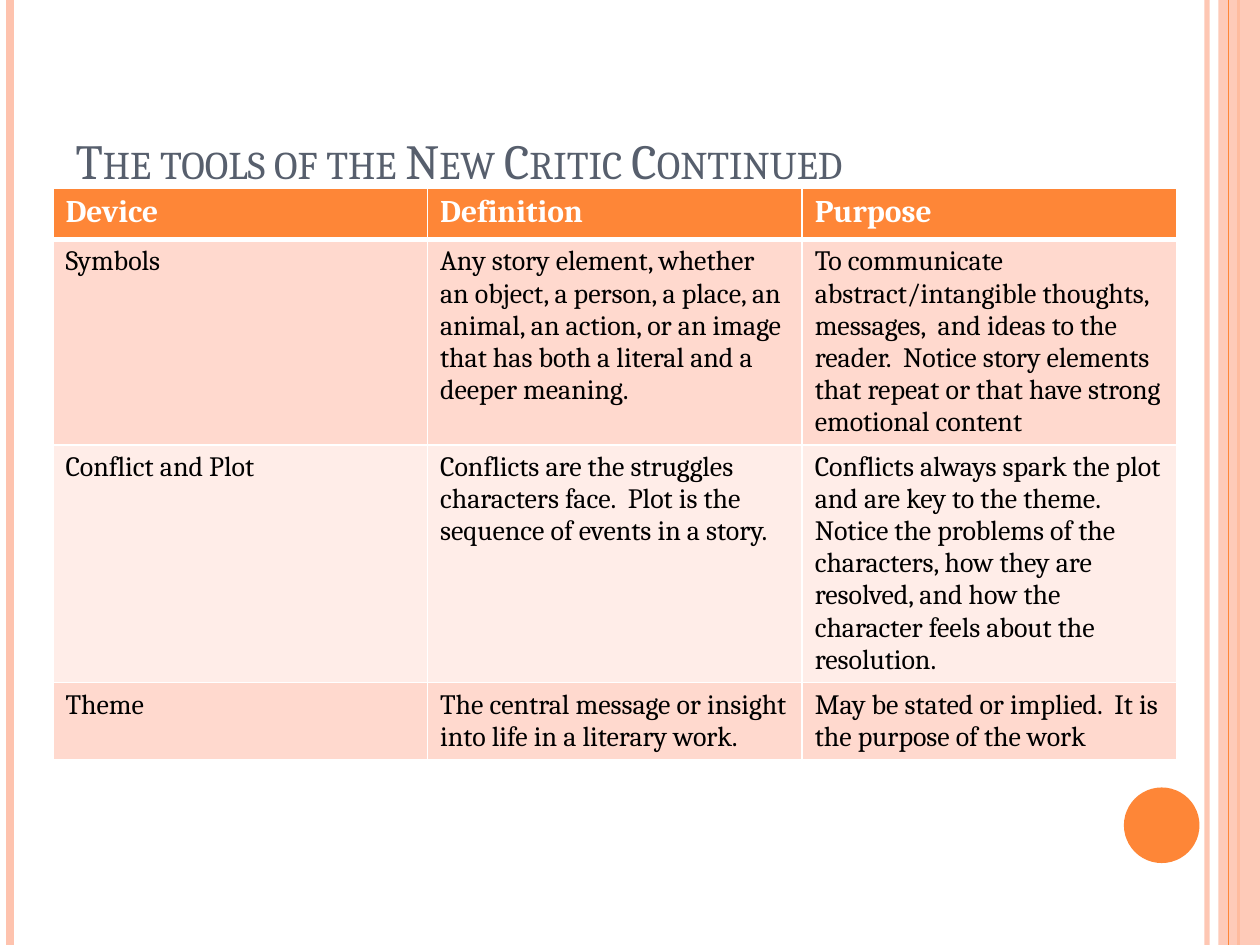
from dataclasses import dataclass

from lxml.etree import SubElement
from pptx import Presentation
from pptx.dml.color import RGBColor
from pptx.enum.shapes import MSO_CONNECTOR, MSO_SHAPE
from pptx.enum.text import MSO_ANCHOR, PP_ALIGN
from pptx.oxml.ns import qn
from pptx.util import Inches, Pt


@dataclass(frozen=True)
class Theme:
    font: str = "Cambria"
    accent: str = "FE8637"
    pale: str = "FEC3AE"
    title: str = "575F6D"
    body: str = "000000"
    white: str = "FFFFFF"
    bands: tuple = ("FFD9CE", "FFEDE8")
    title_size: int = 28
    header_size: int = 18
    body_size: int = 16
    rule: int = 1
    header_rule: int = 3


def unit(n):
    """Length of n grid units; the slide is 100 columns by 75 rows."""
    return Inches(n / 10)


COLS, ROWS = 100, 75


class SlideBuilder:
    def __init__(self, prs, theme):
        self.theme = theme
        self.s = prs.slides.add_slide(prs.slide_layouts[5])

    def style_run(self, r, size, color, bold=False):
        r.font.name = self.theme.font
        r.font.size = Pt(size)
        r.font.bold = bold
        r.font.color.rgb = RGBColor.from_string(color)

    def set_alpha(self, fill_parent, percent):
        color = fill_parent.find(qn("a:solidFill"))[0]
        SubElement(color, qn("a:alpha"), val=str(percent * 1000))

    def vertical_line(self, col, color, width, alpha=None):
        line = self.s.shapes.add_connector(
            MSO_CONNECTOR.STRAIGHT, unit(col), 0, unit(col), unit(ROWS))
        line.line.color.rgb = RGBColor.from_string(color)
        line.line.width = Pt(width)
        sp_pr = line._element.spPr
        if alpha:
            self.set_alpha(sp_pr.find(qn("a:ln")), alpha)
        SubElement(sp_pr, qn("a:effectLst"))

    def shape(self, kind, col, row, width, height, color, alpha=None):
        sp = self.s.shapes.add_shape(
            kind, unit(col), unit(row), unit(width), unit(height))
        sp.shadow.inherit = False
        sp.fill.solid()
        sp.fill.fore_color.rgb = RGBColor.from_string(color)
        sp.line.fill.background()
        if alpha:
            self.set_alpha(sp._element.spPr, alpha)

    def title(self, text, col, row, width, height):
        sp = self.s.shapes.title
        sp.left, sp.top = unit(col), unit(row)
        sp.width, sp.height = unit(width), unit(height)
        tf = sp.text_frame
        tf.text = text
        tf.word_wrap = True
        tf.vertical_anchor = MSO_ANCHOR.BOTTOM
        p = tf.paragraphs[0]
        p.alignment = PP_ALIGN.LEFT
        r = p.runs[0]
        self.style_run(r, self.theme.title_size, self.theme.title)
        r.font._element.set("cap", "small")

    def cell_borders(self, cell, top, bottom):
        tc_pr = cell._tc.get_or_add_tcPr()
        widths = {"lnL": self.theme.rule, "lnR": self.theme.rule,
                  "lnT": top, "lnB": bottom}
        for side, width in widths.items():
            ln = SubElement(tc_pr, qn(f"a:{side}"), w=str(Pt(width)))
            fill = SubElement(ln, qn("a:solidFill"))
            SubElement(fill, qn("a:srgbClr"), val=self.theme.white)

    def cell(self, cell, text, row):
        t = self.theme
        header = row == 0
        self.cell_borders(cell,
                          top=t.header_rule if row == 1 else t.rule,
                          bottom=t.header_rule if header else t.rule)
        color = t.accent if header else t.bands[(row - 1) % 2]
        cell.fill.solid()
        cell.fill.fore_color.rgb = RGBColor.from_string(color)
        cell.text_frame.text = text
        r = cell.text_frame.paragraphs[0].runs[0]
        if header:
            self.style_run(r, t.header_size, t.white, bold=True)
        else:
            self.style_run(r, t.body_size, t.body)

    def table(self, data, col, row, width, height, row_height):
        """Rows start at row_height and grow to fit their text."""
        frame = self.s.shapes.add_table(
            len(data), len(data[0]),
            unit(col), unit(row), unit(width), unit(height))
        for i, texts in enumerate(data):
            frame.table.rows[i].height = unit(row_height)
            for j, text in enumerate(texts):
                self.cell(frame.table.cell(i, j), text, i)
        frame.height = unit(height)


DEVICES = [
    ("Device", "Definition", "Purpose"),
    ("Symbols",
     "Any story element, whether an object, a person, a place, an animal, "
     "an action, or an image that has both a literal and a deeper meaning.",
     "To communicate abstract/intangible thoughts, messages,  and ideas to "
     "the reader.  Notice story elements that repeat or that have strong "
     "emotional content"),
    ("Conflict and Plot",
     "Conflicts are the struggles characters face.  Plot is the sequence of "
     "events in a story.",
     "Conflicts always spark the plot and are key to the theme.  Notice the "
     "problems of the characters, how they are resolved, and how the "
     "character feels about the resolution."),
    ("Theme",
     "The central message or insight into life in a literary work.",
     "May be stated or implied.  It is the purpose of the work"),
]


def main():
    prs = Presentation()
    prs.slide_width, prs.slide_height = unit(COLS), unit(ROWS)
    theme = Theme()
    b = SlideBuilder(prs, theme)

    b.vertical_line(95.8, theme.pale, 3, alpha=93)
    b.vertical_line(0.8, theme.pale, 4.5)
    b.vertical_line(98.3, theme.accent, 1.5)
    b.shape(MSO_SHAPE.RECTANGLE, 96.7, 0, 3.3, ROWS, theme.pale, alpha=87)
    b.vertical_line(97.5, theme.accent, 0.75)
    b.shape(MSO_SHAPE.OVAL, 89.2, 62.5, 6, 6, theme.accent)

    b.title("The tools of the New Critic Continued", 5, 3, 81.7, 12.5)
    b.table(DEVICES, 4.2, 14.9, 89.2, 55.1, row_height=4.1)

    prs.save("out.pptx")


if __name__ == "__main__":
    main()
